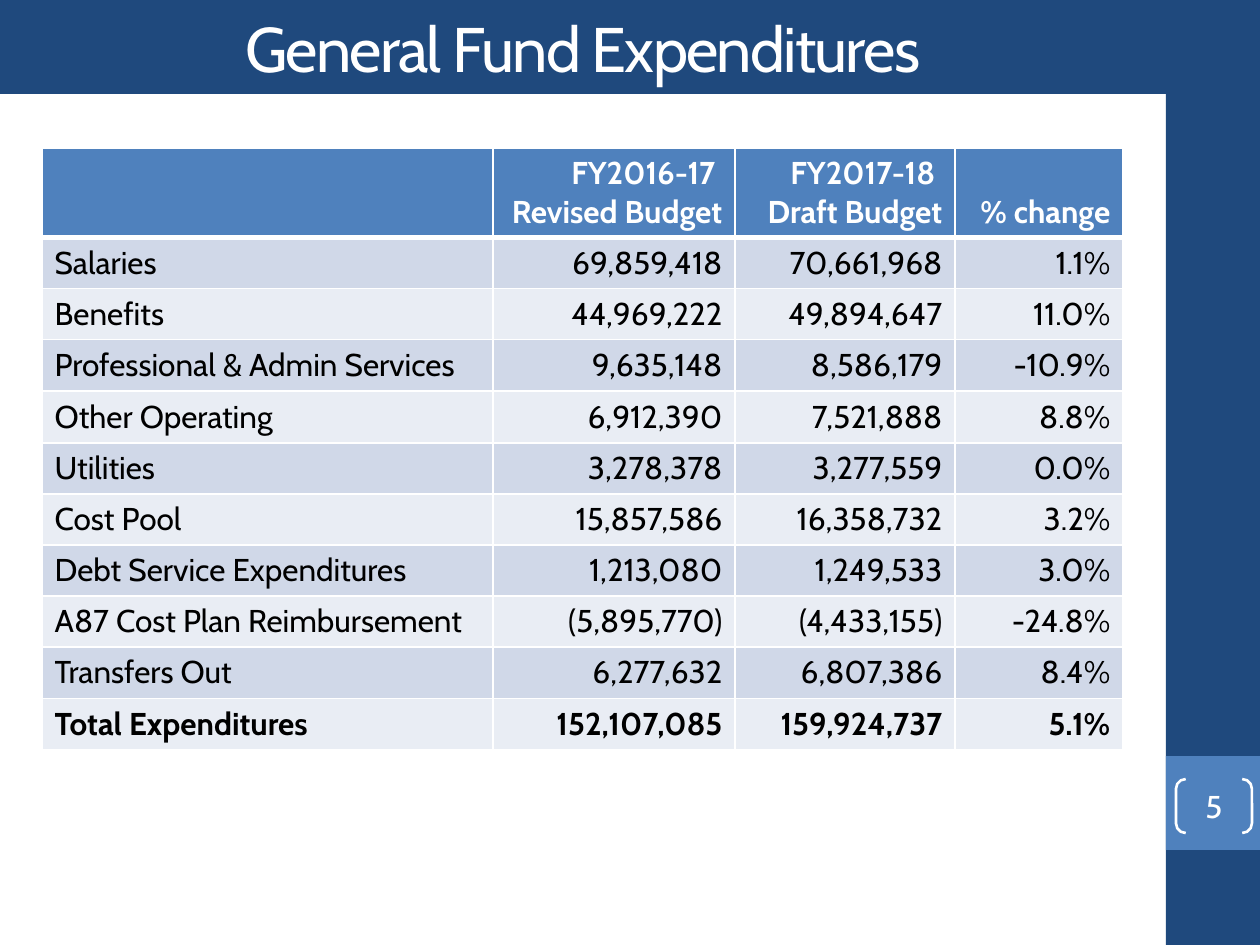
import pptx
import pptx.util
import pptx.dml.color
import pptx.enum.shapes
import pptx.enum.text
import pptx.oxml
import pptx.oxml.ns

RGB = pptx.dml.color.RGBColor
SHAPE = pptx.enum.shapes.MSO_SHAPE
ALIGN = pptx.enum.text.PP_ALIGN
ANCHOR = pptx.enum.text.MSO_ANCHOR

NAVY = RGB(0x1F, 0x49, 0x7D)
BLUE = RGB(0x4F, 0x81, 0xBD)
DARK = RGB(0xD0, 0xD8, 0xE8)
PALE = RGB(0xE9, 0xED, 0xF4)
WHITE = RGB(0xFF, 0xFF, 0xFF)
BLACK = RGB(0, 0, 0)

FONT = "Cabin"
SCALE = 914400 / 126
WIDTHS = [451, 242, 220, 168]
HEIGHTS = [88, 51, 51, 51, 52] + [51] * 6
ROWS = [
    ("", "FY2016-17 \nRevised Budget", "FY2017-18 \nDraft Budget", "% change"),
    ("Salaries", "69,859,418", "70,661,968", "1.1%"),
    ("Benefits", "44,969,222", "49,894,647", "11.0%"),
    ("Professional & Admin Services", "9,635,148", "8,586,179", "-10.9%"),
    ("Other Operating", "6,912,390", "7,521,888", "8.8%"),
    ("Utilities", "3,278,378", "3,277,559", "0.0%"),
    ("Cost Pool", "15,857,586", "16,358,732", "3.2%"),
    ("Debt Service Expenditures", "1,213,080", "1,249,533", "3.0%"),
    ("A87 Cost Plan Reimbursement", "(5,895,770)", "(4,433,155)", "-24.8%"),
    ("Transfers Out", "6,277,632", "6,807,386", "8.4%"),
    ("Total Expenditures", "152,107,085", "159,924,737", "5.1%"),
]


def px(num):
    """Turn pixels into EMU."""
    return pptx.util.Emu(round(num * SCALE))


def style(frame, size, color, align, bold=False):
    """Format all paragraphs of a text frame."""
    for para in frame.paragraphs:
        para.alignment = align
        font = para.font
        font.name, font.size, font.bold = FONT, pptx.util.Pt(size), bold
        font.color.rgb = color


def add_block(slide, kind, box, fill=None):
    """Add a shape without line or shadow, filled if a colour is given."""
    shape = slide.shapes.add_shape(kind, *map(px, box))
    shape.shadow.inherit = False
    shape.line.fill.background()
    if fill is None:
        shape.fill.background()
    else:
        shape.fill.solid()
        shape.fill.fore_color.rgb = fill
    return shape


def add_side(slide, box, number):
    """Build the side band with its bracketed page number."""
    left, top, width, height = box
    add_block(slide, SHAPE.RECTANGLE, box, NAVY)
    add_block(slide, SHAPE.RECTANGLE, (left, top + 756, width, width), BLUE)
    mark = add_block(slide, SHAPE.DOUBLE_BRACKET,
                     (left + 10, top + 779, width - 18, 54))
    mark.adjustments[0] = 0.18
    mark.line.color.rgb = WHITE
    mark.line.width = pptx.util.Pt(1.5)
    frame = mark.text_frame
    frame.margin_left = frame.margin_right = 0
    frame.margin_top = frame.margin_bottom = 0
    frame.vertical_anchor = ANCHOR.MIDDLE
    frame.text = number
    style(frame, 18, WHITE, ALIGN.CENTER)


def add_title(slide, box, text):
    """Fill and place the title band."""
    title = slide.shapes.title
    title.left, title.top, title.width, title.height = map(px, box)
    title.fill.solid()
    title.fill.fore_color.rgb = NAVY
    frame = title.text_frame
    frame.text = text
    frame.vertical_anchor = ANCHOR.MIDDLE
    style(frame, 36, WHITE, ALIGN.CENTER)
    frame.paragraphs[0].runs[0].font._element.set("spc", "-100")


def add_edges(cell, top, bottom):
    """Draw white borders with the given top and bottom points."""
    props = cell._tc.get_or_add_tcPr()
    edges = {"L": 1, "R": 1, "T": top, "B": bottom}
    for spot, (side, size) in enumerate(edges.items()):
        props.insert(spot, pptx.oxml.parse_xml(
            f'<a:ln{side} {pptx.oxml.ns.nsdecls("a")} w="{size * 12700}">'
            f'<a:solidFill><a:srgbClr val="{WHITE}"/></a:solidFill>'
            f'</a:ln{side}>'))


def add_budget(slide, left, top):
    """Build the budget table at the given corner."""
    box = (left, top, sum(WIDTHS), sum(HEIGHTS))
    table = slide.shapes.add_table(
        len(ROWS), len(WIDTHS), *map(px, box)).table
    for column, width in zip(table.columns, WIDTHS):
        column.width = px(width)
    for row, height in zip(table.rows, HEIGHTS):
        row.height = px(height)
    for i, row in enumerate(ROWS):
        head, total = i == 0, i == len(ROWS) - 1
        fill = BLUE if head else (DARK if i % 2 else PALE)
        for j, text in enumerate(row):
            cell = table.cell(i, j)
            cell.text = text
            cell.vertical_anchor = ANCHOR.BOTTOM
            cell.fill.solid()
            cell.fill.fore_color.rgb = fill
            style(cell.text_frame, 18, WHITE if head else BLACK,
                  ALIGN.RIGHT if j else ALIGN.LEFT, head or total)
            add_edges(cell, 3 if i == 1 else 1, 3 if head else 1)


def main():
    """Build and save the slide."""
    deck = pptx.Presentation()
    deck.slide_width, deck.slide_height = px(1260), px(945)
    slide = deck.slides.add_slide(deck.slide_layouts[5])
    add_side(slide, (1166, 0, 94, 945), "5")
    add_title(slide, (0, 0, 1166, 94), "General Fund Expenditures")
    add_budget(slide, 42, 148)
    deck.save("out.pptx")


if __name__ == "__main__":
    main()
